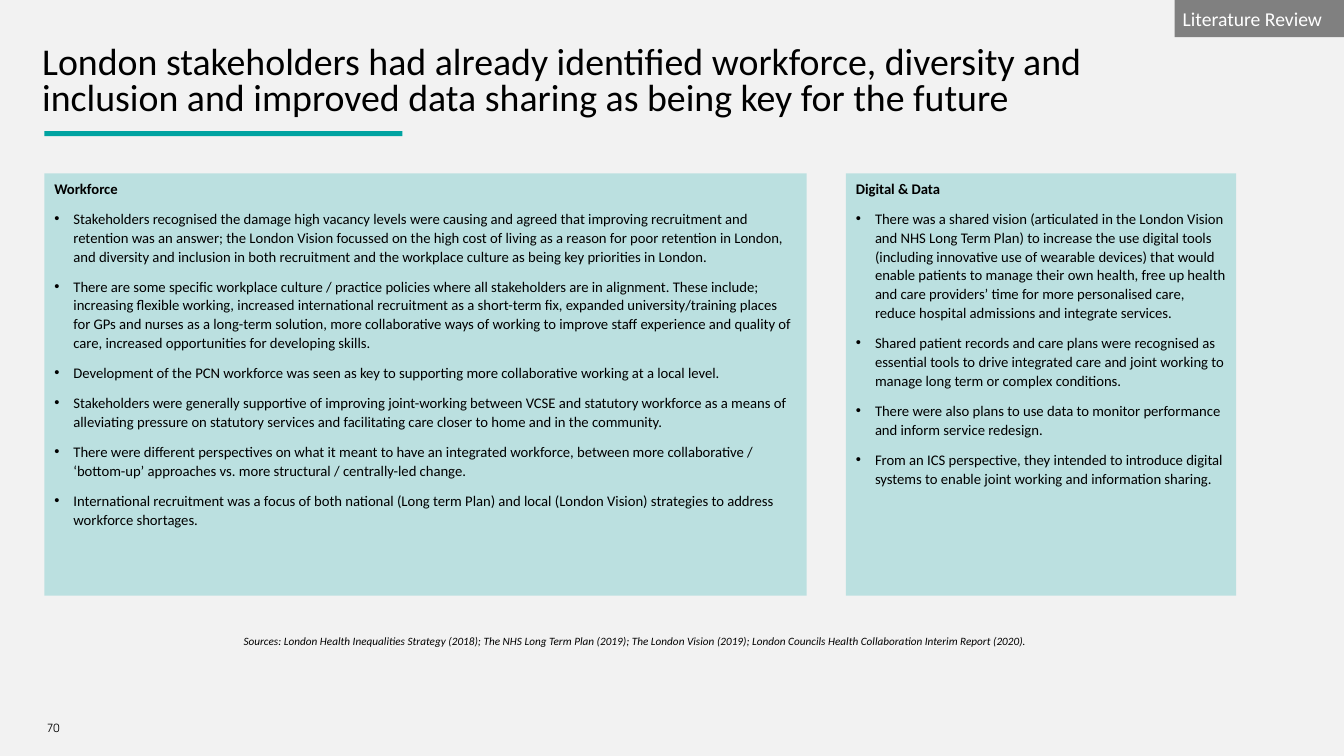
from lxml.etree import SubElement
from pptx import Presentation
from pptx.dml.color import RGBColor
from pptx.enum.shapes import MSO_SHAPE as Shape
from pptx.enum.text import MSO_ANCHOR as Anchor, PP_ALIGN as Align
from pptx.oxml.ns import qn
from pptx.util import Inches, Pt

BLACK = RGBColor(0x00, 0x00, 0x00)
WHITE = RGBColor(0xFF, 0xFF, 0xFF)
PAGE_GREY = RGBColor(0xF2, 0xF2, 0xF2)
TAG_GREY = RGBColor(0x80, 0x80, 0x80)
TEAL = RGBColor(0x00, 0xA3, 0xA1)
PALE_TEAL = RGBColor(0xBB, 0xE0, 0xE0)

PANEL_TOP, PANEL_HEIGHT = 1.72, 4.19
PANELS = [
    (0.44, 7.56, "Workforce", [
        "Stakeholders recognised the damage high vacancy levels were causing and agreed that improving recruitment and retention was an answer; the London Vision focussed on the high cost of living as a reason for poor retention in London, and diversity and inclusion in both recruitment and the workplace culture as being key priorities in London.",
        "There are some specific workplace culture / practice policies where all stakeholders are in alignment. These include; increasing flexible working, increased international recruitment as a short-term fix, expanded university/training places for GPs and nurses as a long-term solution, more collaborative ways of working to improve staff experience and quality of care, increased opportunities for developing skills.",
        "Development of the PCN workforce was seen as key to supporting more collaborative working at a local level.",
        "Stakeholders were generally supportive of improving joint-working between VCSE and statutory workforce as a means of alleviating pressure on statutory services and facilitating care closer to home and in the community.",
        "There were different perspectives on what it meant to have an integrated workforce, between more collaborative / ‘bottom-up’ approaches vs. more structural / centrally-led change.",
        "International recruitment was a focus of both national (Long term Plan) and local (London Vision) strategies to address workforce shortages.",
    ]),
    (8.39, 3.87, "Digital & Data", [
        "There was a shared vision (articulated in the London Vision and NHS Long Term Plan) to increase the use digital tools (including innovative use of wearable devices) that would enable patients to manage their own health, free up health and care providers’ time for more personalised care, reduce hospital admissions and integrate services.",
        "Shared patient records and care plans were recognised as essential tools to drive integrated care and joint working to manage long term or complex conditions.",
        "There were also plans to use data to monitor performance and inform service redesign.",
        "From an ICS perspective, they intended to introduce digital systems to enable joint working and information sharing.",
    ]),
]


def add_box(left, top, width, height, fill=None, anchor=Anchor.TOP):
    """Add a filled rectangle, or a text box when no fill is given."""
    box = tuple(Inches(length) for length in (left, top, width, height))
    if fill is None:
        shape = slide.shapes.add_textbox(*box)
    else:
        shape = slide.shapes.add_shape(Shape.RECTANGLE, *box)
        shape.shadow.inherit = False
        shape.fill.solid()
        shape.fill.fore_color.rgb = fill
        shape.line.fill.background()
    shape.text_frame.word_wrap = True
    shape.text_frame.vertical_anchor = anchor
    return shape


def write(paragraph, text, size, font="Calibri", color=BLACK, bold=False, italic=False,
          align=Align.LEFT, line_spacing=1.0, space_after=0, bullet=False):
    paragraph.alignment = align
    paragraph.line_spacing = line_spacing
    paragraph.space_after = Pt(space_after)
    if bullet:
        properties = paragraph._p.get_or_add_pPr()
        properties.set("marL", str(Inches(0.19)))
        properties.set("indent", str(-Inches(0.19)))
        SubElement(properties, qn("a:buFont"), typeface="Arial")
        SubElement(properties, qn("a:buChar"), char="•")
    run = paragraph.add_run()
    run.text = text
    run.font.name = font
    run.font.size = Pt(size)
    run.font.bold = bold
    run.font.italic = italic
    run.font.color.rgb = color


presentation = Presentation()
presentation.slide_width = Inches(13.33)
presentation.slide_height = Inches(7.5)
slide = presentation.slides.add_slide(presentation.slide_layouts[6])
slide.background.fill.solid()
slide.background.fill.fore_color.rgb = PAGE_GREY

title = add_box(0.32, 0.41, 11.46, 1.03)
write(title.text_frame.paragraphs[0],
      "London stakeholders had already identified workforce, diversity and "
      "inclusion and improved data sharing as being key for the future",
      size=27, line_spacing=0.8)
add_box(0.44, 1.3, 3.55, 0.05, fill=TEAL)

section_tag = add_box(11.65, 0, 1.68, 0.37, fill=TAG_GREY, anchor=Anchor.MIDDLE)
section_tag.text_frame.margin_left = section_tag.text_frame.margin_right = Inches(0.08)
write(section_tag.text_frame.paragraphs[0], "Literature Review", size=14, color=WHITE)

for left, width, heading, points in PANELS:
    frame = add_box(left, PANEL_TOP, width, PANEL_HEIGHT, fill=PALE_TEAL).text_frame
    write(frame.paragraphs[0], heading, size=10.5, bold=True, line_spacing=1.07, space_after=8)
    for point in points:
        write(frame.add_paragraph(), point, size=10.5, line_spacing=1.07, space_after=8,
              bullet=True)

sources = add_box(0.35, 6.24, 11.91, 0.24)
write(sources.text_frame.paragraphs[0],
      "Sources: London Health Inequalities Strategy (2018); The NHS Long Term Plan (2019); "
      "The London Vision (2019); London Councils Health Collaboration Interim Report (2020).",
      size=8, italic=True, align=Align.CENTER)

page_number = add_box(0.37, 7.13, 0.51, 0.19, anchor=Anchor.MIDDLE)
write(page_number.text_frame.paragraphs[0], "70", size=8, font="TeX Gyre Adventor")

presentation.save("out.pptx")
